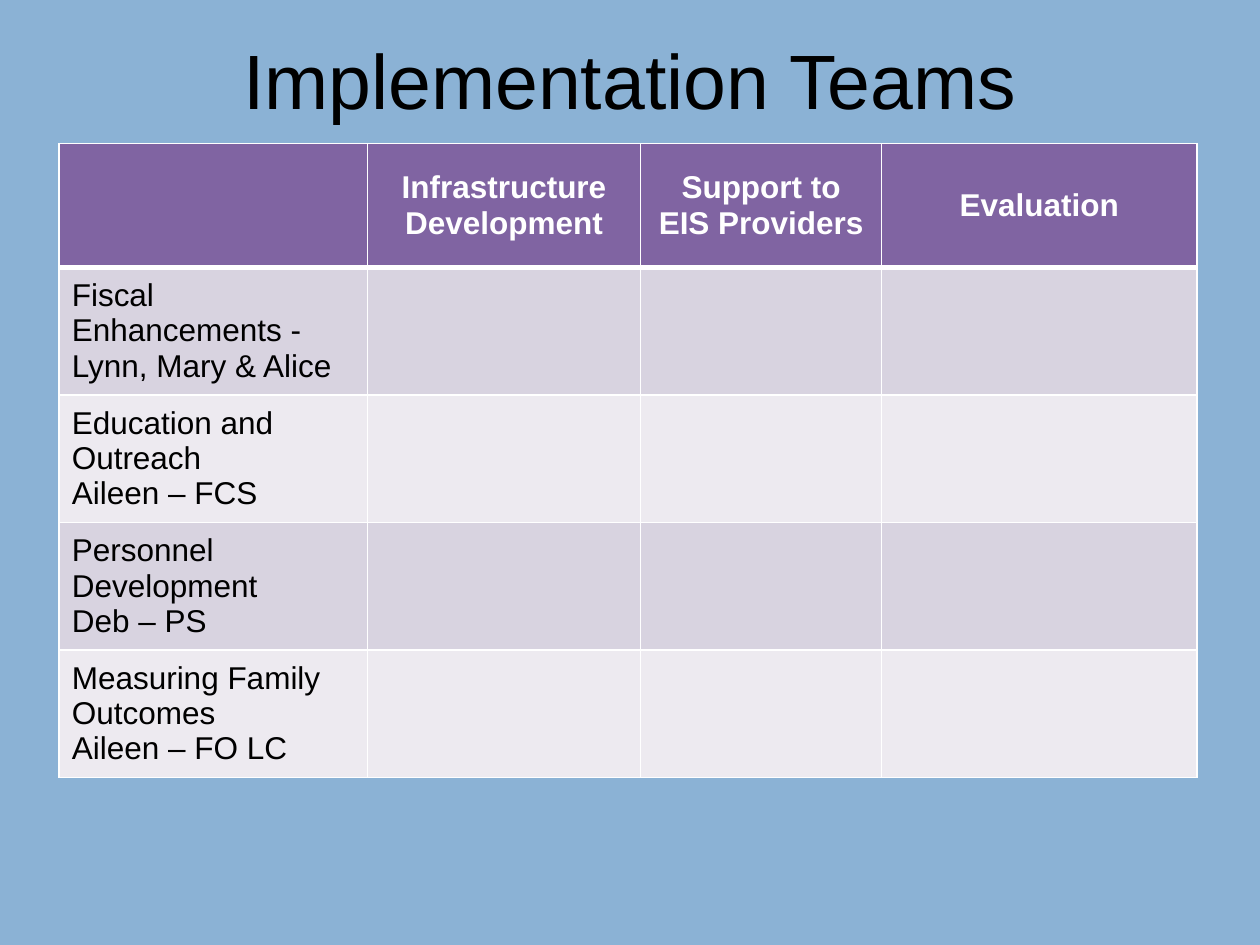
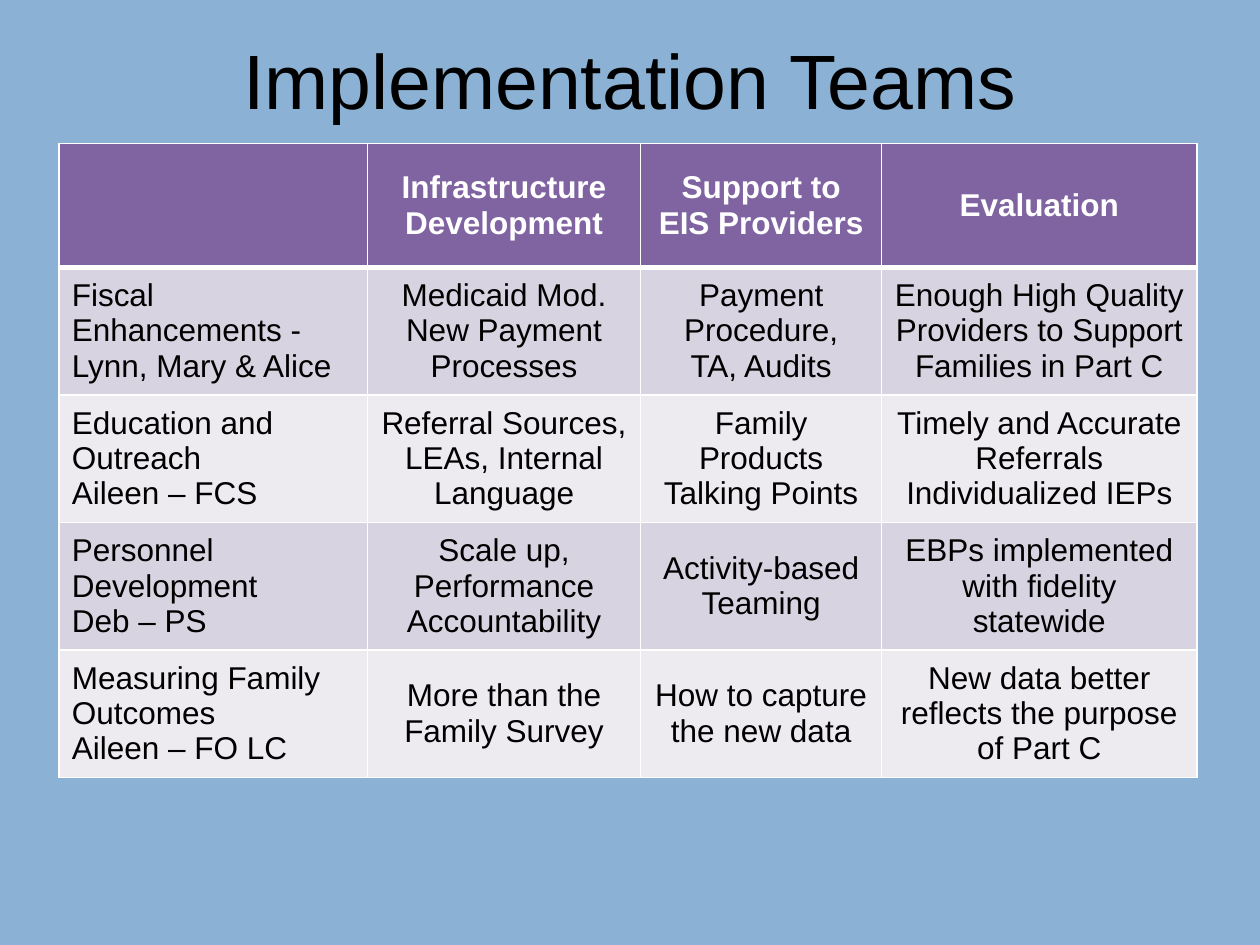
from lxml import etree
from pptx import Presentation
from pptx.dml.color import RGBColor
from pptx.enum.text import MSO_ANCHOR, PP_ALIGN
from pptx.oxml.ns import qn
from pptx.util import Inches, Pt

LEFT, CENTER = PP_ALIGN.LEFT, PP_ALIGN.CENTER
MIDDLE = MSO_ANCHOR.MIDDLE

COLORS = {
    "background": "8BB2D5",
    "header": "8064A2",
    "band_dark": "D8D3E0",
    "band_light": "EDEAF0",
    "border": "FFFFFF",
    "header_text": "FFFFFF",
    "text": "000000",
}
FONT = "Arial"
TITLE = "Implementation Teams"

# Boxes as left, top, width, height in inches
TITLE_BOX = (0.5, 0, 9, 1.25)
TABLE_BOX = (0.47, 1.14, 9.03, 5.03)

# Percent of the table's width and height; body rows share the rest
COLUMN_SHARES = (27.1, 24, 21.2, 27.7)
HEADER_SHARE = 19.5

THIN, THICK = 1, 3

HEADINGS = ["", "Infrastructure Development", "Support to EIS Providers", "Evaluation"]

# Each line of a cell is one paragraph
TEAMS = [
    "Fiscal Enhancements -\nLynn, Mary & Alice",
    "Education and Outreach\nAileen – FCS",
    "Personnel Development\nDeb – PS",
    "Measuring Family\nOutcomes\nAileen – FO LC",
]
NO_WORK = [["", "", ""] for _ in TEAMS]
TEAM_WORK = [
    ["Medicaid Mod. New Payment\nProcesses",
     "Payment Procedure,\nTA, Audits",
     "Enough High Quality Providers to Support Families in Part C"],
    ["Referral Sources, LEAs, Internal Language",
     "Family Products\nTalking Points",
     "Timely and Accurate Referrals\nIndividualized IEPs"],
    ["Scale up,\nPerformance Accountability",
     "Activity-based Teaming",
     "EBPs implemented with fidelity statewide"],
    ["More than the Family Survey",
     "How to capture the new data",
     "New data better reflects the purpose of Part C"],
]


def color(name):
    return RGBColor.from_string(COLORS[name])


def write(tf, text, size, color_name, align, bold=False):
    for i, line in enumerate(text.split("\n")):
        p = tf.paragraphs[0] if i == 0 else tf.add_paragraph()
        p.alignment = align
        r = p.add_run()
        r.text = line
        r.font.name = FONT
        r.font.size = Pt(size)
        r.font.bold = bold
        r.font.color.rgb = color(color_name)


def set_borders(cell, top, bottom):
    tc_pr = cell._tc.get_or_add_tcPr()
    for side, width in (("L", THIN), ("R", THIN), ("T", top), ("B", bottom)):
        ln = etree.SubElement(tc_pr, qn(f"a:ln{side}"), w=str(Pt(width)))
        fill = etree.SubElement(ln, qn("a:solidFill"))
        etree.SubElement(fill, qn("a:srgbClr"), val=COLORS["border"])


def add_title(s, box):
    sp = s.shapes.title
    sp.left, sp.top, sp.width, sp.height = map(Inches, box)
    tf = sp.text_frame
    tf.word_wrap = True
    tf.vertical_anchor = MIDDLE
    write(tf, TITLE, 44, "text", CENTER)


def add_team_table(s, box, work):
    rows = [HEADINGS] + [[team] + cells for team, cells in zip(TEAMS, work)]
    left, top, width, height = map(Inches, box)
    table = s.shapes.add_table(len(rows), len(HEADINGS), left, top, width, height).table

    # Grid
    for column, share in zip(table.columns, COLUMN_SHARES):
        column.width = int(width * share / 100)
    header_height = int(height * HEADER_SHARE / 100)
    for i, row in enumerate(table.rows):
        row.height = (height - header_height) // len(TEAMS) if i else header_height

    # Cells: header row, then alternating bands
    for i, row in enumerate(rows):
        is_header = i == 0
        band = "header" if is_header else ("band_light", "band_dark")[i % 2]
        for j, text in enumerate(row):
            cell = table.cell(i, j)
            set_borders(cell, THICK if i == 1 else THIN, THICK if is_header else THIN)
            cell.fill.solid()
            cell.fill.fore_color.rgb = color(band)
            cell.vertical_anchor = MIDDLE
            if text:
                write(cell.text_frame, text, 18,
                      "header_text" if is_header else "text",
                      CENTER if j else LEFT, bold=is_header)


def add_team_slide(prs, work):
    s = prs.slides.add_slide(prs.slide_layouts.get_by_name("Title Only"))
    add_title(s, TITLE_BOX)
    add_team_table(s, TABLE_BOX, work)


def main():
    prs = Presentation()
    prs.slide_width, prs.slide_height = Inches(10), Inches(7.5)
    background = prs.slide_master.background.fill
    background.solid()
    background.fore_color.rgb = color("background")
    for work in (NO_WORK, TEAM_WORK):
        add_team_slide(prs, work)
    prs.save("out.pptx")


if __name__ == "__main__":
    main()
